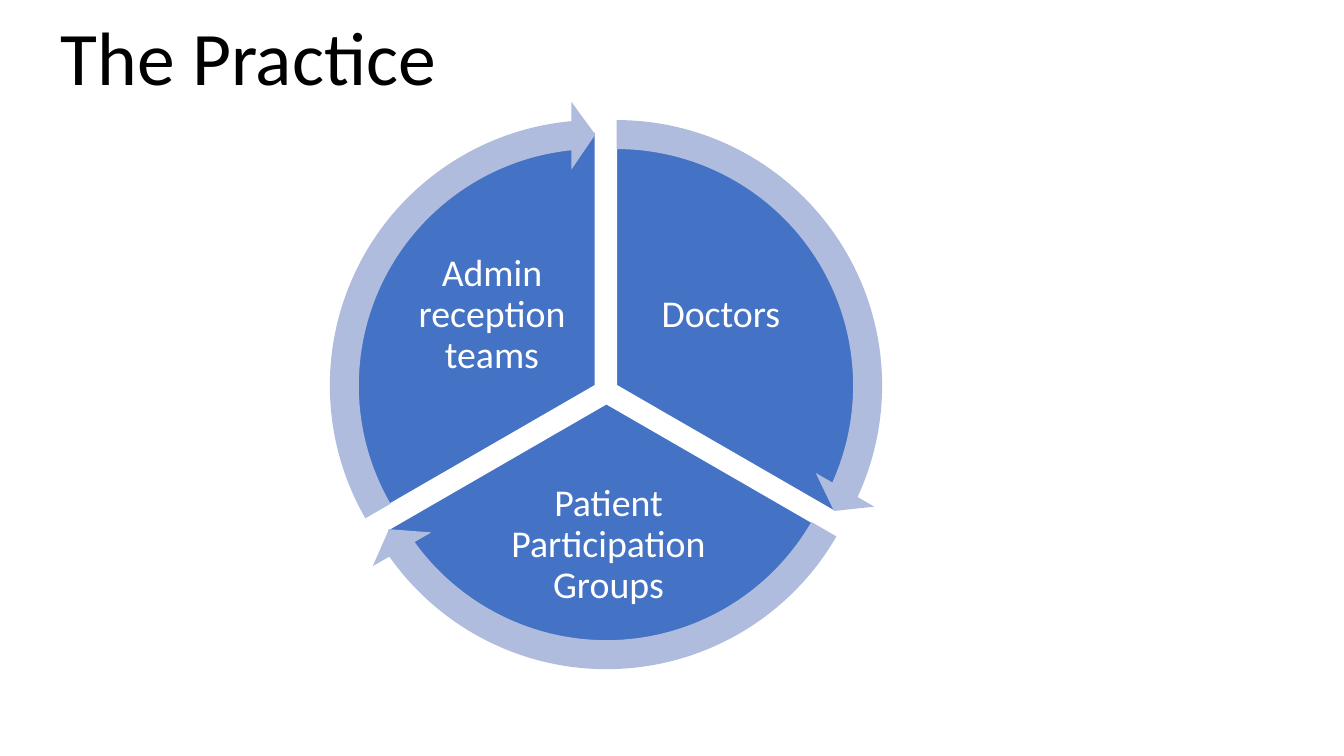
import pptx
import pptx.util
import pptx.dml.color
import pptx.enum.shapes
import pptx.enum.text
from dataclasses import dataclass

SHAPE = pptx.enum.shapes.MSO_SHAPE
ANCHOR = pptx.enum.text.MSO_ANCHOR


@dataclass(frozen=True)
class Theme:
    font: str = "Calibri"
    ink: str = "000000"
    paper: str = "FFFFFF"
    wedge: str = "4472C4"
    ring: str = "B0BCDE"
    head: int = 54
    label: int = 27


class Page:
    cell = pptx.util.Inches(0.1)

    def __init__(self, deck, theme):
        self.theme = theme
        self.slide = deck.slides.add_slide(deck.slide_layouts[6])

    def group(self):
        return self.slide.shapes.add_group_shape().shapes

    def place(self, *box):
        return [round(n * self.cell) for n in box]

    def color(self, code):
        return pptx.dml.color.RGBColor.from_string(code)

    def text(self, home, words, box, size, ink, anchor, pad):
        frame = home.add_textbox(*self.place(*box)).text_frame
        frame.word_wrap = True
        frame.vertical_anchor = anchor
        if pad is not None:
            inset = round(pad * self.cell)
            frame.margin_left = frame.margin_right = inset
            frame.margin_top = frame.margin_bottom = inset
        frame.text = words
        para = frame.paragraphs[0]
        para.alignment = pptx.enum.text.PP_ALIGN.CENTER
        para.line_spacing = 0.9
        font = para.runs[0].font
        font.name = self.theme.font
        font.size = pptx.util.Pt(size)
        font.color.rgb = self.color(ink)

    def title(self, words, box):
        self.text(self.slide.shapes, words, box, self.theme.head,
                  self.theme.ink, ANCHOR.BOTTOM, None)

    def label(self, home, words, box):
        self.text(home, words, box, self.theme.label,
                  self.theme.paper, ANCHOR.MIDDLE, 0.4)

    def shape(self, home, kind, left, top, size, fill, turns):
        item = home.add_shape(kind, *self.place(left, top, size, size))
        item.shadow.inherit = False
        item.fill.solid()
        item.fill.fore_color.rgb = self.color(fill)
        item.line.fill.background()
        for spot, value in enumerate(turns):
            item.adjustments[spot] = value
        return item

    def wedge(self, home, left, top, start, end):
        item = self.shape(home, SHAPE.PIE, left, top, 50.3,
                          self.theme.wedge, (start, end))
        item.line.color.rgb = self.color(self.theme.paper)
        item.line.width = pptx.util.Pt(1)

    def ring(self, home, left, top, start, end):
        self.shape(home, SHAPE.CIRCULAR_ARROW, left - 3.1, top - 3.1, 56.5,
                   self.theme.ring, (0.0509, 3.275, end, start, 0.0593))


def main():
    deck = pptx.Presentation()
    deck.slide_width = pptx.util.Inches(13.33)
    deck.slide_height = pptx.util.Inches(7.5)
    page = Page(deck, Theme())
    page.title("The Practice", (0.5, 0.7, 48.3, 9.9))

    third, full = 72, 216
    parts = [
        ("Doctors", (36, 13.1), (62.5, 23.8, 18, 15)),
        ("Patient Participation Groups", (35, 14.9), (46.9, 47.5, 26.9, 13.2)),
        ("Admin reception teams", (33.9, 13.1), (39.8, 23.8, 18, 15)),
    ]
    cycle = page.group()
    starts = [(162 + third * step) % full for step in range(len(parts))]
    for start, (words, spot, box) in zip(starts, parts):
        page.wedge(cycle, *spot, start, (start + third) % full)
        page.label(cycle, words, box)
    for step, (start, part) in enumerate(zip(starts, parts)):
        page.ring(cycle, *part[1], start, 14.72 + third * step)
    deck.save("out.pptx")


if __name__ == "__main__":
    main()
